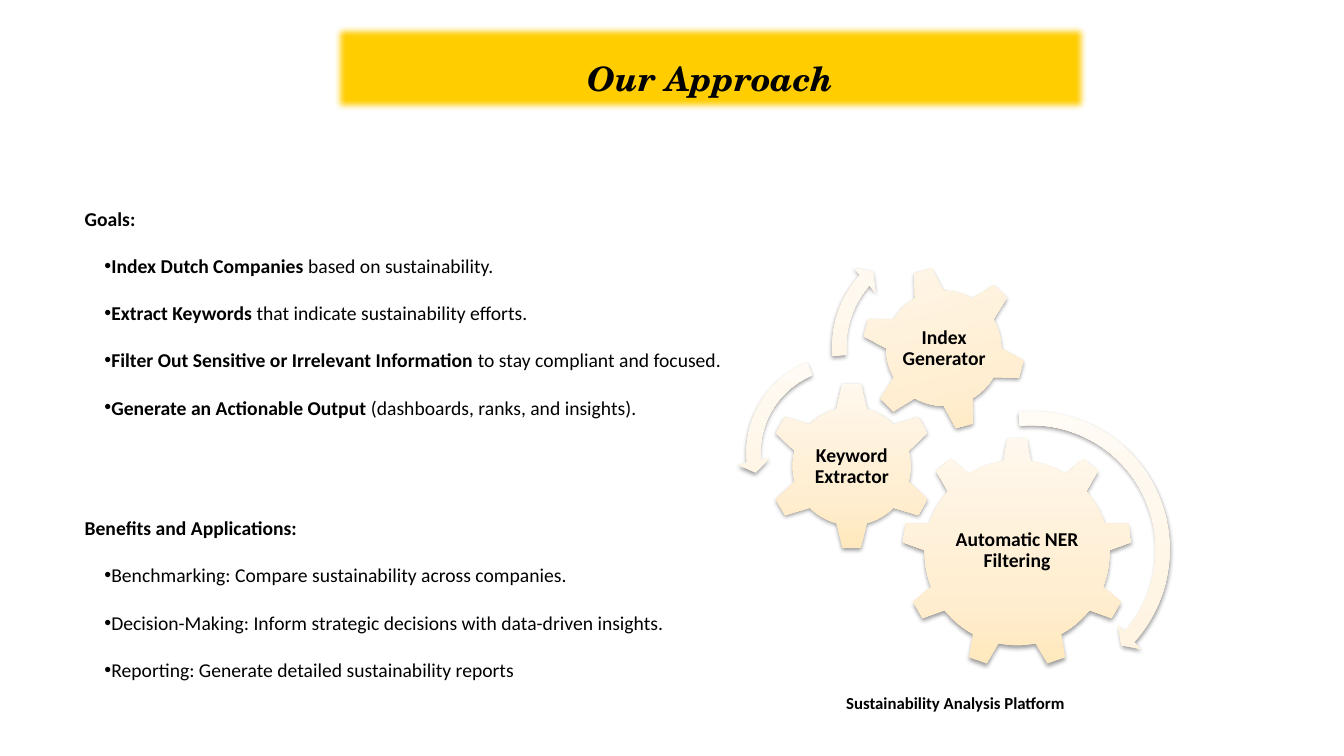
from pptx import Presentation, oxml, util as u
from pptx.dml import color as dml
from pptx.enum import shapes, text
from pptx.oxml import ns

GOALS = [
    ("Index Dutch Companies", " based on sustainability."),
    ("Extract Keywords", " that indicate sustainability efforts."),
    ("Filter Out Sensitive or Irrelevant Information", " to stay compliant and focused."),
    ("Generate an Actionable Output", " (dashboards, ranks, and insights)."),
]
BENEFITS = [
    ("", "Benchmarking: Compare sustainability across companies."),
    ("", "Decision-Making: Inform strategic decisions with data-driven insights."),
    ("", "Reporting: Generate detailed sustainability reports"),
]
SHAPE = shapes.MSO_SHAPE
# kind, left, top, size, rotation, label, label box
GEARS = [
    (SHAPE.GEAR_9, 22.73, 11.02, 5.82, 0, "Automatic NER Filtering", (23.9, 12.37, 3.48, 3)),
    (SHAPE.GEAR_6, 19.35, 9.63, 4.24, 0, "Keyword Extractor", (20.42, 10.72, 2.11, 2.08)),
    (SHAPE.GEAR_6, 21.72, 6.71, 4.14, 345, "Index Generator", (22.63, 7.62, 2.34, 2.34)),
]
# kind, left, top, size, adjustments
ARROWS = [
    (SHAPE.CIRCULAR_ARROW, 22.28, 10.13, 7.44, (0.047, 2.99, 25.064, 158.825, 0.055)),
    (SHAPE.LEFT_CIRCULAR_ARROW, 18.59, 8.71, 5.41, (0.065, 4.3, 104.891, 148.378, 0.075)),
    (SHAPE.CIRCULAR_ARROW, 20.75, 5.82, 5.84, (0.06, 3.941, 133.138, 105.082, 0.07)),
]
GEAR_TINTS = ("FFE8BD", "FFEED1", "FFF8EE")
ARROW_TINTS = ("FFF1DA", "FFF5E5", "FFFBF5")


def rgb(value):
    return dml.RGBColor.from_string(value)


def xml(tag, attributes="", inner=""):
    """Build one DrawingML element."""
    return oxml.parse_xml(f"<a:{tag} {ns.nsdecls('a')} {attributes}>{inner}</a:{tag}>")


def write(paragraph, words, size=14, font="Calibri", bold=False, italic=False,
          color="000000", spacing=None, align=None):
    """Append a run to a paragraph and format both."""
    run = paragraph.add_run()
    run.text = words
    run.font.size, run.font.name = u.Pt(size), font
    run.font.bold, run.font.italic = bold, italic
    run.font.color.rgb = rgb(color)
    if spacing:
        paragraph.line_spacing = spacing
    if align is not None:
        paragraph.alignment = align


def place(item, left, top, width, height):
    item.left, item.top = u.Cm(left), u.Cm(top)
    item.width, item.height = u.Cm(width), u.Cm(height)


def add_effect(shape, effect):
    shape.shadow.inherit = False
    shape._element.spPr.find(ns.qn("a:effectLst")).append(effect)


def fill_title(title):
    place(title, 8.46, 0.69, 18.9, 2.06)
    title.fill.solid()
    title.fill.fore_color.rgb = rgb("FFCD00")
    title.line.color.rgb = rgb("FFCD00")
    title.line.width = u.Pt(2)
    add_effect(title, xml("softEdge", 'rad="63500"'))
    frame = title.text_frame
    frame.auto_size = text.MSO_AUTO_SIZE.NONE
    frame.vertical_anchor = text.MSO_ANCHOR.MIDDLE
    write(frame.paragraphs[0], "Our Approach", size=24, font="TeX Gyre Schola",
          bold=True, italic=True, spacing=1.5, align=text.PP_ALIGN.CENTER)


def set_bullet(paragraph, char=None):
    """Set the indent and bullet, or remove both when no char is given."""
    indent = u.Cm(0.25) if char else 0
    properties = paragraph._p.get_or_add_pPr()
    properties.set("marL", str(indent))
    properties.set("indent", str(indent))
    properties.append(xml("buChar", f'char="{char}"') if char else xml("buNone"))


def fill_list(body, heading, points, top, height):
    place(body, 1.88, top, 16.94, height)
    frame = body.text_frame
    frame.auto_size = text.MSO_AUTO_SIZE.NONE
    first = frame.paragraphs[0]
    set_bullet(first)
    write(first, heading, bold=True, spacing=2)
    for lead, rest in points:
        point = frame.add_paragraph()
        set_bullet(point, "•")
        if lead:
            write(point, lead, bold=True)
        write(point, rest, spacing=2)
    for paragraph in frame.paragraphs:
        paragraph.space_before = u.Pt(0)


def add_part(slide, kind, left, top, size, tints):
    """Add a square gear or arrow with a vertical gradient and a soft shadow."""
    part = slide.shapes.add_shape(kind, u.Cm(left), u.Cm(top), u.Cm(size), u.Cm(size))
    part.line.fill.background()
    stops = "".join(f'<a:gs pos="{pos}"><a:srgbClr val="{rgb(tint)}"/></a:gs>'
                    for pos, tint in zip((0, 35000, 100000), tints))
    gradient = xml("gradFill", 'rotWithShape="1"',
                   f'<a:gsLst>{stops}</a:gsLst><a:lin ang="16200000" scaled="0"/>')
    part._element.spPr.find(ns.qn("a:prstGeom")).addnext(gradient)
    add_effect(part, xml(
        "outerShdw", 'blurRad="40000" dist="20000" dir="5400000" rotWithShape="0"',
        '<a:srgbClr val="000000"><a:alpha val="38000"/></a:srgbClr>'))
    return part


def add_label(slide, words, box, inset=None, **style):
    frame = slide.shapes.add_textbox(*map(u.Cm, box)).text_frame
    frame.word_wrap = True
    if inset is not None:
        frame.vertical_anchor = text.MSO_ANCHOR.MIDDLE
        frame.margin_left = frame.margin_right = u.Cm(inset)
        frame.margin_top = frame.margin_bottom = u.Cm(inset)
    write(frame.paragraphs[0], words, bold=True, **style)


def main():
    deck = Presentation()
    deck.slide_width, deck.slide_height = u.Cm(33.88), u.Cm(19.05)
    slide = deck.slides.add_slide(deck.slide_layouts.get_by_name("Two Content"))
    title, goals, benefits = slide.placeholders
    fill_title(title)
    fill_list(goals, "Goals:", GOALS, top=4.5, height=6.07)
    fill_list(benefits, "Benefits and Applications:", BENEFITS, top=12.29, height=4.88)
    for kind, left, top, size, rotation, label, box in GEARS:
        add_part(slide, kind, left, top, size, GEAR_TINTS).rotation = rotation
        add_label(slide, label, box, inset=0.05, spacing=0.9, align=text.PP_ALIGN.CENTER)
    for kind, left, top, size, adjustments in ARROWS:
        arrow = add_part(slide, kind, left, top, size, ARROW_TINTS)
        for index, value in enumerate(adjustments):
            arrow.adjustments[index] = value
    add_label(slide, "Sustainability Analysis Platform", (21.08, 17.32, 8.81, 0.76), size=12)
    deck.save("out.pptx")


if __name__ == "__main__":
    main()
